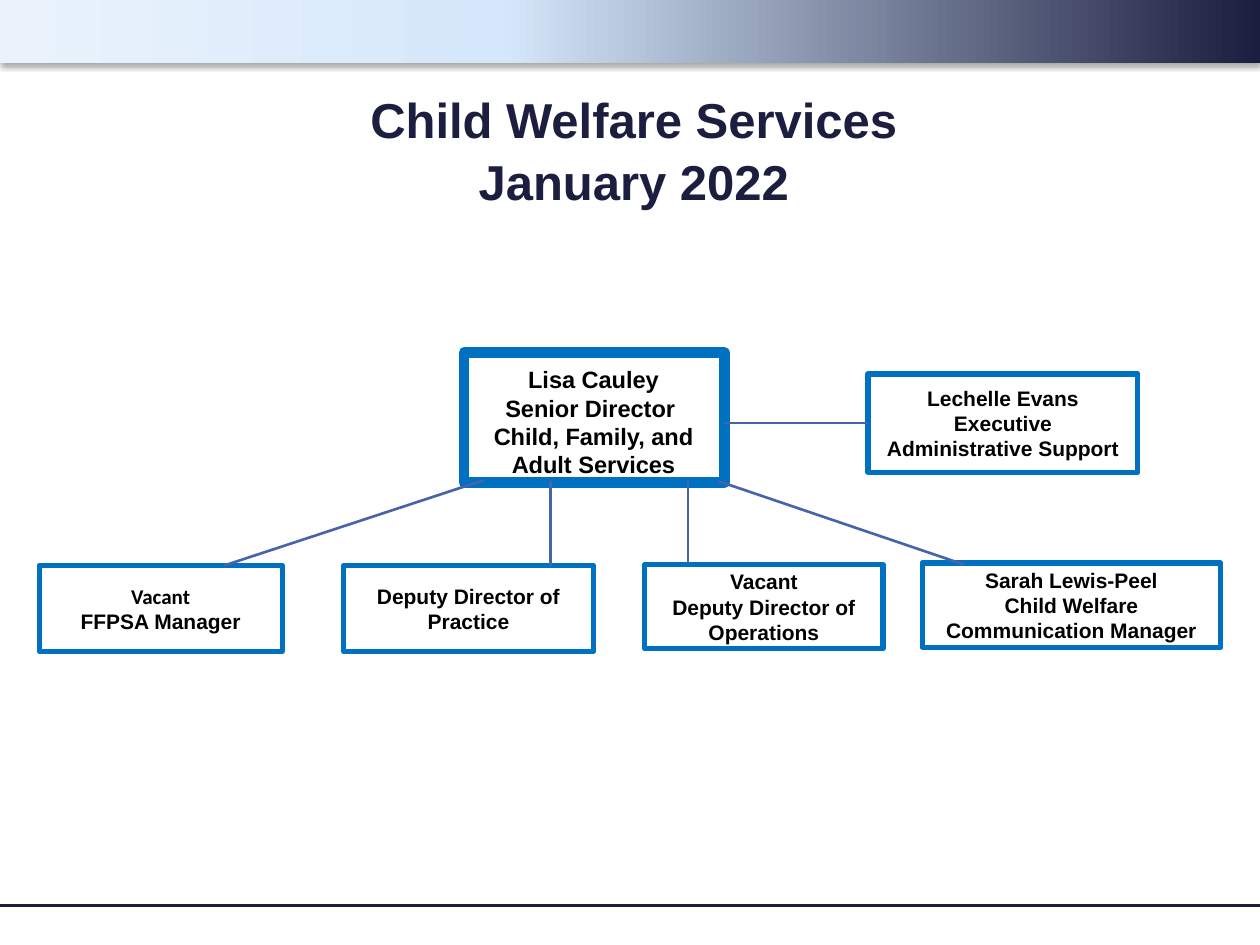
import copy

import lxml.etree
import pptx
import pptx.dml.color
import pptx.enum.shapes
import pptx.enum.text
import pptx.oxml.ns
import pptx.util

Cm = pptx.util.Cm
Pt = pptx.util.Pt
qn = pptx.oxml.ns.qn

NAVY, BLUE, INDIGO = "1B1E3E", "0070C0", "4663AB"
TEXT_FORMAT = {"name": "Arial", "size": Pt(12), "bold": True}


def colour(value):
    return pptx.dml.color.RGBColor.from_string(value)


def set_format(target, values):
    for name, value in values.items():
        setattr(target, name, value)


class Chart:
    """Style of the organisation chart and the slide it is drawn on."""

    def __init__(self, deck):
        self.slide = deck.slides.add_slide(deck.slide_layouts[6])

    def fill_text(self, box, lines, ink="000000", line_spacing=None, **changes):
        """Each line is a string, or a pair of string and font name."""
        frame = box.text_frame
        frame.word_wrap = True
        for index, line in enumerate(lines):
            text, font = line if isinstance(line, tuple) else (line, "Arial")
            para = frame.paragraphs[0] if index == 0 else frame.add_paragraph()
            para.alignment = pptx.enum.text.PP_ALIGN.CENTER
            para.line_spacing = line_spacing
            para.text = text
            for span in para.runs:
                set_format(span.font, {**TEXT_FORMAT, "name": font, **changes})
                span.font.color.rgb = colour(ink)

    def text(self, place, lines, **style):
        box = self.slide.shapes.add_textbox(*map(Cm, place))
        self.fill_text(box, lines, **style)
        return box

    def rectangle(self, place):
        box = self.slide.shapes.add_shape(
            pptx.enum.shapes.MSO_SHAPE.RECTANGLE, *map(Cm, place))
        box.shadow.inherit = False
        return box

    def frame(self, place, width, fill=None):
        box = self.rectangle(place)
        if fill:
            box.fill.solid()
            box.fill.fore_color.rgb = colour(fill)
        else:
            box.fill.background()
        box.line.color.rgb = colour(BLUE)
        box.line.width = Pt(width)
        return box

    def post(self, place, lines):
        box = self.frame(place, 3, "FFFFFF")
        box.text_frame.vertical_anchor = pptx.enum.text.MSO_ANCHOR.MIDDLE
        self.fill_text(box, lines)
        return box

    def line(self, start, end, ink=INDIGO, width=1.5):
        link = self.slide.shapes.add_connector(
            pptx.enum.shapes.MSO_CONNECTOR.STRAIGHT, *map(Cm, start + end))
        link.line.color.rgb = colour(ink)
        link.line.width = Pt(width)
        lxml.etree.SubElement(link._element.spPr, qn("a:effectLst"))
        return link

    def banner(self, place, stops):
        band = self.rectangle(place)
        band.line.fill.background()
        band.fill.gradient()
        band.fill.gradient_angle = 180
        stop_list = band._element.spPr.find(".//" + qn("a:gsLst"))
        while len(stop_list) < len(stops):
            stop_list.append(copy.deepcopy(stop_list[-1]))
        for stop, (position, value) in zip(band.fill.gradient_stops, stops):
            stop.position = position
            stop.color.rgb = colour(value)
        # Soft shadow straight below
        effects = band._element.spPr.find(qn("a:effectLst"))
        shadow = lxml.etree.SubElement(
            effects, qn("a:outerShdw"), blurRad=str(Pt(3.1)),
            dist=str(Pt(1.8)), dir="5400000", rotWithShape="0")
        ink = lxml.etree.SubElement(shadow, qn("a:srgbClr"), val="000000")
        lxml.etree.SubElement(ink, qn("a:alpha"), val="35000")


def main():
    deck = pptx.Presentation()
    deck.slide_width, deck.slide_height = Cm(25.4), Cm(19.05)
    chart = Chart(deck)

    # Banner, footer rule and title
    chart.banner((0, 0, 25.4, 1.27),
                 [(0, NAVY), (0.6, "D5E7FA"), (1, "EAF3FC")])
    chart.line((0, 18.26), (25.4, 18.26), NAVY, 1.75)
    title = chart.text((1.88, 1.75, 21.79, 1.52),
                       ["Child Welfare Services\vJanuary 2022"],
                       ink=NAVY, size=Pt(28), line_spacing=1.05)
    set_format(title.text_frame, dict.fromkeys(
        ("margin_left", "margin_top", "margin_right", "margin_bottom"), 0))

    # Director
    chart.frame((9.35, 7.11, 5.26, 2.62), 6)
    chart.text((9.45, 7.24, 5.03, 2.57),
               ["Lisa Cauley", "Senior Director ",
                "Child, Family, and Adult Services"], size=Pt(13.5))

    # Executive support
    support = chart.post((17.5, 7.54, 5.44, 1.98),
                         ["Lechelle Evans", "Executive Administrative Support"])
    chart.line((14.6, 8.53), (17.5, 8.53)).end_connect(support, 1)

    # Reporting posts, each with the line that leads to it
    posts = [
        ((0.79, 11.4, 4.9, 1.73), (9.75, 9.68), (4.52, 11.4),
         [("Vacant", "Calibri"), "FFPSA Manager"]),
        ((6.93, 11.4, 5.03, 1.73), (11.1, 9.7), (11.1, 11.4),
         ["Deputy Director of Practice"]),
        ((13, 11.38, 4.8, 1.7), (13.87, 9.68), (13.87, 11.35),
         ["Vacant", "Deputy Director of Operations"]),
        ((18.59, 11.35, 6.02, 1.7), (14.48, 9.7), (19.43, 11.38),
         ["Sarah Lewis-Peel", "Child Welfare Communication Manager"]),
    ]
    for place, start, end, lines in posts:
        chart.post(place, lines)
        chart.line(start, end)

    deck.save("out.pptx")


if __name__ == "__main__":
    main()
